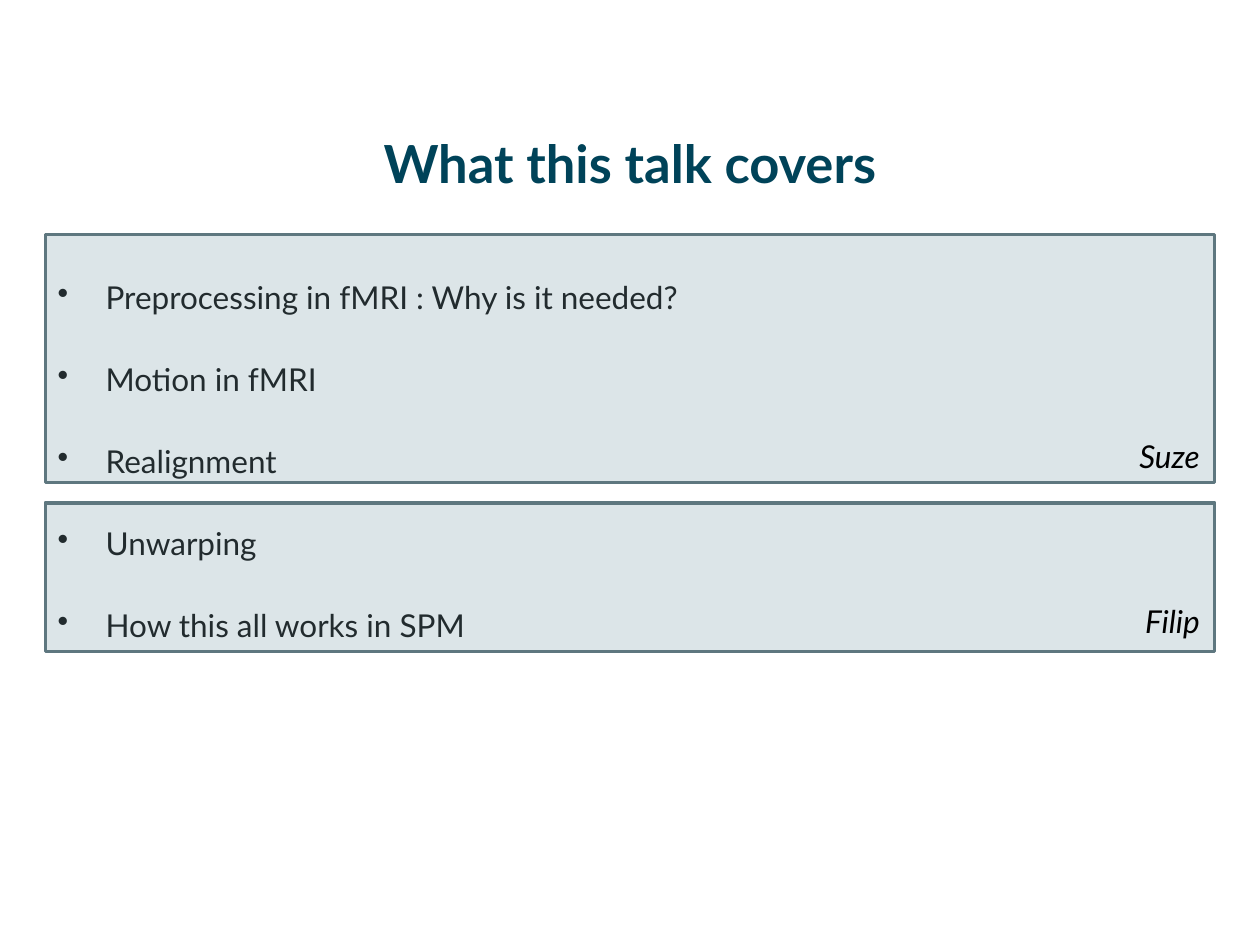
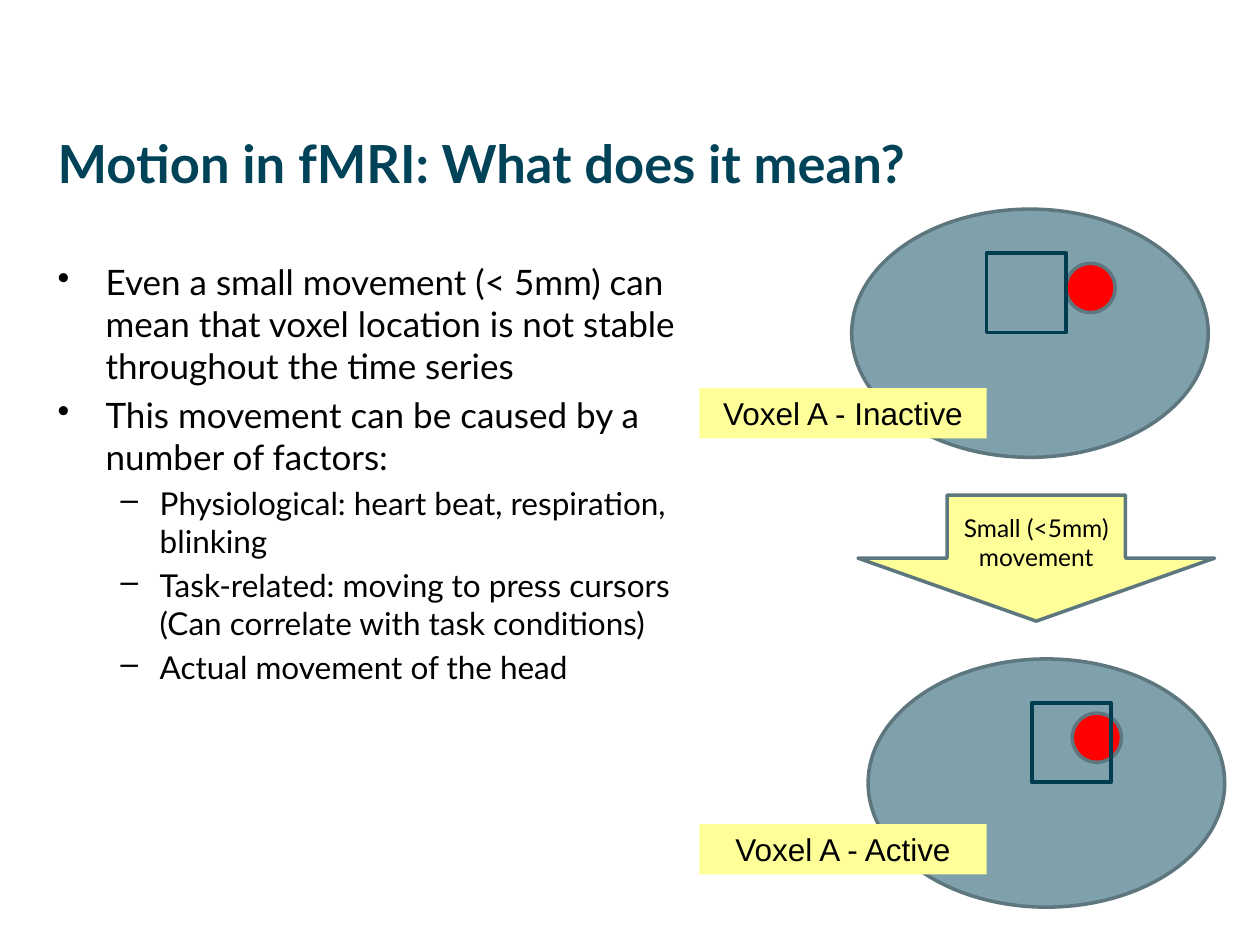
from dataclasses import dataclass
from typing import Any, Optional

import pptx
import pptx.dml.color
import pptx.enum.shapes
import pptx.enum.text
import pptx.util
from lxml import etree
from pptx.oxml.ns import qn
from pptx.util import Inches

SHAPE = pptx.enum.shapes.MSO_SHAPE
ALIGN = pptx.enum.text.PP_ALIGN
ANCHOR = pptx.enum.text.MSO_ANCHOR

BLACK = "000000"
TITLE_BLUE = "004359"
VOXEL_BLUE = "003C50"
SLATE = "7FA1AC"
SLATE_EDGE = "5E777F"
RED = "FF0000"
YELLOW = "FFFF99"

MARGIN = 0.36
CONTENT_WIDTH = 9.28
TITLE_TOP = 0.99
BRAIN_WIDTH, BRAIN_HEIGHT = 2.83, 1.97
SOURCE_SIZE = 0.39
VOXEL_SIZE = 0.63
LABEL_LEFT, LABEL_WIDTH, LABEL_HEIGHT = 5.55, 2.28, 0.4
SPEAKER_LEFT, SPEAKER_WIDTH = 8.2, 1.42


@dataclass(frozen=True)
class BulletStyle:
    mark: str
    margin: float
    hanging: float


@dataclass(frozen=True)
class Bullet:
    text: str
    size: int
    style: BulletStyle


@dataclass(frozen=True)
class SpeakerPart:
    speaker: str
    top: float
    height: float
    speaker_top: float


@dataclass(frozen=True)
class Brain:
    left: float
    top: float
    source_dx: float
    voxel_dx: float
    label: str
    label_top: float


MAIN = BulletStyle("•", 0.38, 0.38)
SUB = BulletStyle("–", 0.81, 0.31)

TOPICS = [
    Bullet(topic, 18, MAIN)
    for topic in (
        "Preprocessing in fMRI : Why is it needed?",
        "Motion in fMRI",
        "Realignment",
        "Unwarping",
        "How this all works in SPM",
    )
]
PARTS = [
    SpeakerPart("Suze", 1.86, 1.97, 3.42),
    SpeakerPart("Filip", 3.99, 1.18, 4.73),
]
MOTION_POINTS = [
    Bullet("Even a small movement (< 5mm) can mean that voxel location "
           "is not stable throughout the time series", 20, MAIN),
    Bullet("This movement can be caused by a number of factors:", 20, MAIN),
    Bullet("Physiological: heart beat, respiration, blinking", 18, SUB),
    Bullet("Task-related: moving to press cursors "
           "(Can correlate with task conditions)", 18, SUB),
    Bullet("Actual movement of the head", 18, SUB),
]
BRAINS = [
    Brain(6.76, 1.66, 1.7, 1.07, "Voxel A - Inactive", 3.08),
    Brain(6.89, 5.23, 1.62, 1.3, "Voxel A - Active", 6.54),
]


def set_color(color_format: Any, value: str) -> None:
    color_format.rgb = pptx.dml.color.RGBColor.from_string(value)


def write(paragraph: Any, text: str, *, size: int = 18, font: str = "Lato",
          color: str = BLACK, bold: bool = False, italic: bool = False,
          align: Any = ALIGN.LEFT) -> None:
    paragraph.alignment = align
    run = paragraph.add_run()
    run.text = text
    run.font.name = font
    run.font.size = pptx.util.Pt(size)
    run.font.bold = bold
    run.font.italic = italic
    set_color(run.font.color, color)


def add_text_frame(slide: Any, left: float, top: float, width: float,
                   height: float) -> Any:
    box = slide.shapes.add_textbox(Inches(left), Inches(top),
                                   Inches(width), Inches(height))
    box.text_frame.word_wrap = True
    return box.text_frame


def add_title(slide: Any, text: str, height: float, align: Any) -> None:
    frame = add_text_frame(slide, MARGIN, TITLE_TOP, CONTENT_WIDTH, height)
    write(frame.paragraphs[0], text, size=30, color=TITLE_BLUE, bold=True,
          align=align)


def add_bullets(slide: Any, bullets: list[Bullet], top: float, width: float,
                height: float, line_spacing: float = 1.0) -> None:
    frame = add_text_frame(slide, MARGIN, top, width, height)
    for index, bullet in enumerate(bullets):
        paragraph = frame.paragraphs[0] if index == 0 else frame.add_paragraph()
        paragraph.level = int(bullet.style is SUB)
        properties = paragraph._p.get_or_add_pPr()
        properties.set("marL", str(Inches(bullet.style.margin)))
        properties.set("indent", str(-Inches(bullet.style.hanging)))
        etree.SubElement(properties, qn("a:buChar")).set("char", bullet.style.mark)
        paragraph.line_spacing = line_spacing
        if index:
            paragraph.space_before = pptx.util.Pt(0.2 * bullet.size)
        write(paragraph, bullet.text, size=bullet.size)


def add_figure(shapes: Any, kind: Any, left: float, top: float, width: float,
               height: float, *, fill: Optional[str] = None,
               opacity: Optional[int] = None, edge: Optional[str] = SLATE_EDGE,
               edge_width: float = 2) -> Any:
    figure = shapes.add_shape(kind, Inches(left), Inches(top),
                              Inches(width), Inches(height))
    figure.shadow.inherit = False
    if fill is None:
        figure.fill.background()
    else:
        figure.fill.solid()
        set_color(figure.fill.fore_color, fill)
    if opacity is not None:
        fill_color = figure._element.spPr.find(qn("a:solidFill"))[0]
        etree.SubElement(fill_color, qn("a:alpha")).set("val", str(opacity * 1000))
    if edge is None:
        figure.line.fill.background()
    else:
        set_color(figure.line.color, edge)
        figure.line.width = pptx.util.Pt(edge_width)
    figure.text_frame.word_wrap = True
    figure.text_frame.vertical_anchor = ANCHOR.MIDDLE
    return figure


def add_brain(slide: Any, brain: Brain) -> None:
    shapes = slide.shapes.add_group_shape().shapes
    add_figure(shapes, SHAPE.OVAL, brain.left, brain.top,
               BRAIN_WIDTH, BRAIN_HEIGHT, fill=SLATE)
    add_figure(shapes, SHAPE.OVAL, brain.left + brain.source_dx,
               brain.top + 0.43, SOURCE_SIZE, SOURCE_SIZE, fill=RED)
    add_figure(shapes, SHAPE.RECTANGLE, brain.left + brain.voxel_dx,
               brain.top + 0.35, VOXEL_SIZE, VOXEL_SIZE,
               edge=VOXEL_BLUE, edge_width=2.25)


def add_label(slide: Any, brain: Brain) -> None:
    label = add_figure(slide.shapes, SHAPE.RECTANGLE, LABEL_LEFT,
                       brain.label_top, LABEL_WIDTH, LABEL_HEIGHT,
                       fill=YELLOW, edge=None)
    write(label.text_frame.paragraphs[0], brain.label, font="Arial",
          align=ALIGN.CENTER)


def build_overview(slide: Any) -> None:
    add_bullets(slide, TOPICS, 1.86, CONTENT_WIDTH, 4.88, line_spacing=2.0)
    for part in PARTS:
        add_figure(slide.shapes, SHAPE.RECTANGLE, MARGIN, part.top,
                   CONTENT_WIDTH, part.height, fill=SLATE, opacity=27)
    add_title(slide, "What this talk covers", 0.71, ALIGN.CENTER)
    for part in PARTS:
        frame = add_text_frame(slide, SPEAKER_LEFT, part.speaker_top,
                               SPEAKER_WIDTH, LABEL_HEIGHT)
        write(frame.paragraphs[0], part.speaker, italic=True, align=ALIGN.RIGHT)


def build_motion(slide: Any) -> None:
    add_title(slide, "Motion in fMRI: What does it mean?", 1.42, ALIGN.LEFT)
    add_bullets(slide, MOTION_POINTS, 2.02, 5.43, 4.93)
    before, after = BRAINS
    add_brain(slide, before)
    movement = add_figure(slide.shapes, SHAPE.DOWN_ARROW, 6.81, 3.93,
                          BRAIN_WIDTH, 1, fill=YELLOW)
    write(movement.text_frame.paragraphs[0], "Small (<5mm) movement", size=14,
          align=ALIGN.CENTER)
    add_brain(slide, after)
    for brain in BRAINS:
        add_label(slide, brain)


def main() -> None:
    deck = pptx.Presentation()
    deck.slide_width = Inches(10)
    deck.slide_height = Inches(7.5)
    for build in (build_overview, build_motion):
        build(deck.slides.add_slide(deck.slide_layouts[6]))
    deck.save("out.pptx")


if __name__ == "__main__":
    main()
